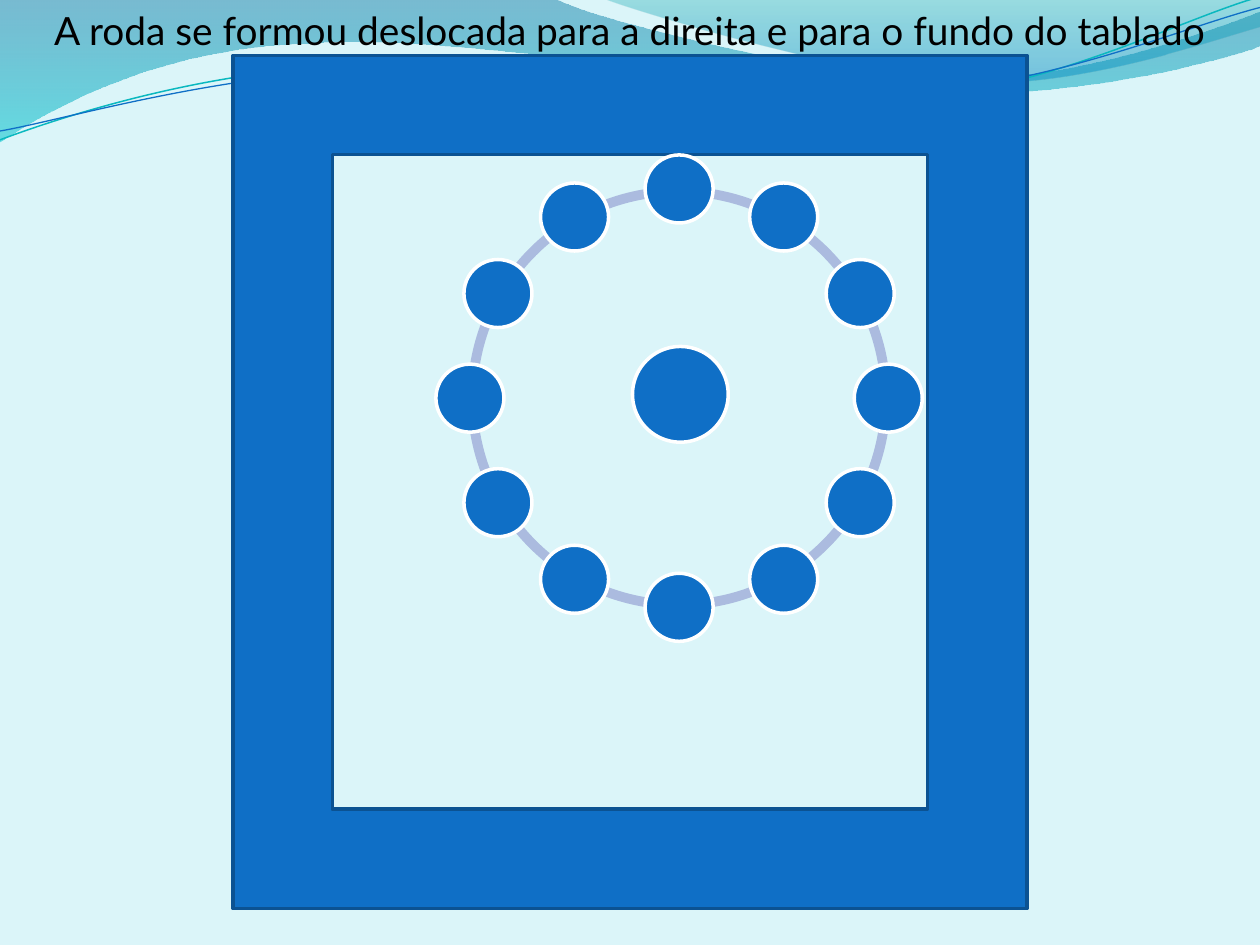
import math

from lxml import etree
from pptx import Presentation
from pptx import util as u
from pptx.dml.color import RGBColor
from pptx.enum import shapes, text
from pptx.oxml.ns import qn

COLORS = {
    "background": "DBF5F9", "blue": "0F6FC6", "edge": "0B5292", "ring": "ABBBDF",
    "white": "FFFFFF", "black": "000000", "teal line": "0AB8BF",
    "deep sea": "0074A1", "aqua": "00C6CF", "lagoon": "00A1A9", "ocean": "008BBF",
}
COLUMNS, ROWS = 10, 7.5
DANCERS = 12
TILT = -2.7

# Each wave is a start point, then straight steps (x, y)
# or curved steps (control x, y, control x, y, end x, y).
LEFT_WAVE = [
    (0, 0), (4.4, -0.01), (4.76, 0.17, 6.64, 0.63, 7.58, 0.63),
    (8.53, 0.63, 9.58, 0.26, 10, 0.09), (10.01, 0.36),
    (9.83, 0.44, 8.7, 0.76, 7.46, 0.75), (6.22, 0.75, 3.82, 0.28, 2.57, 0.34),
    (1.29, 0.36, 0.46, 0.83, -0.01, 1.13), (0, 0),
]
RIGHT_WAVE = [
    (4.79, -0.01), (5.09, 0.11, 6.82, 0.62, 7.69, 0.65),
    (8.56, 0.69, 9.61, 0.32, 10, 0.21), (10, 0), (4.79, -0.01),
]
TEAL_CURVE = [
    (0, 1.11), (0.48, 0.93, 1.58, 0.57, 2.77, 0.52),
    (3.95, 0.47, 5.93, 0.89, 7.13, 0.8), (8.33, 0.71, 9.38, 0.15, 9.98, -0.02),
]
BLUE_CURVE = [
    (0, 1.04), (0.47, 0.96, 1.64, 0.61, 2.83, 0.56),
    (4.03, 0.51, 5.97, 0.84, 7.17, 0.75), (8.36, 0.67, 9.41, 0.21, 10, 0.06),
]


def color(name):
    return RGBColor.from_string(COLORS[name])


def rotate(point, center, degrees):
    """Turn a point clockwise around a center."""
    angle = math.radians(degrees)
    x, y = point[0] - center[0], point[1] - center[1]
    return (center[0] + x * math.cos(angle) - y * math.sin(angle),
            center[1] + x * math.sin(angle) + y * math.cos(angle))


class Stage:
    """Draws on one slide, with lengths in grid columns and rows."""

    title_format = {"name": "Lato", "size": u.Pt(22.2), "bold": False}

    def __init__(self, presentation):
        self.slide = presentation.slides.add_slide(presentation.slide_layouts[6])
        self.column = presentation.slide_width / COLUMNS
        self.row = presentation.slide_height / ROWS
        fill = self.slide.background.fill
        fill.solid()
        fill.fore_color.rgb = color("background")

    def place(self, x, y):
        return round(x * self.column), round(y * self.row)

    def paint(self, shape, fill=None, line=None, width=2):
        shape.shadow.inherit = False
        if fill:
            shape.fill.solid()
            shape.fill.fore_color.rgb = color(fill)
        else:
            shape.fill.background()
        if line:
            shape.line.color.rgb = color(line)
            shape.line.width = u.Pt(width)
        else:
            shape.line.fill.background()

    def preset(self, kind, left, top, width, height, adjustments=(), **style):
        shape = self.slide.shapes.add_shape(
            kind, *self.place(left, top), *self.place(width, height))
        for index, value in enumerate(adjustments):
            shape.adjustments[index] = value
        self.paint(shape, **style)

    def circle(self, x, y, diameter):
        self.preset(shapes.MSO_SHAPE.OVAL, x - diameter / 2, y - diameter / 2,
                    diameter, diameter, fill="blue", line="white")

    def arc(self, x, y, diameter, start, end, thickness):
        """Draw a ring segment between two clockwise angles in degrees."""
        # Angles are stored in 60000ths, adjustments in 100000ths.
        self.preset(shapes.MSO_SHAPE.BLOCK_ARC, x - diameter / 2, y - diameter / 2,
                    diameter, diameter, (start * 0.6, end * 0.6, thickness), fill="ring")

    def curve(self, steps, close=False, tilt=0, center=(0, 0), **style):
        """Draw steps as an outline, stored level and then tilted around its center."""
        points = [self.place(*rotate(step[i:i + 2], center, -tilt))
                  for step in steps for i in range(0, len(step), 2)]
        builder = self.slide.shapes.build_freeform(*points[0])
        builder.add_line_segments(points[1:], close=close)
        shape = builder.convert_to_shape()
        segments = iter(list(shape._element.iter(qn("a:lnTo"))))
        for step in steps[1:]:
            segment = next(segments)
            if len(step) == 6:
                bend = etree.Element(qn("a:cubicBezTo"))
                segment.addprevious(bend)
                for part in (segment, next(segments), next(segments)):
                    bend.append(part[0])
                    part.getparent().remove(part)
        shape.rotation = tilt
        self.paint(shape, **style)
        return shape

    def wave(self, steps, stops):
        """Fill a closed outline from top to bottom; stops are (position, colour, opacity %)."""
        shape = self.curve(steps, close=True)
        shape.fill.gradient()
        shape.fill.gradient_angle = 270
        for stop, (position, name, _) in zip(shape.fill.gradient_stops, stops):
            stop.position = position
            stop.color.rgb = color(name)
        gradient_colors = shape._element.spPr.find(qn("a:gradFill")).iter(qn("a:srgbClr"))
        for element, (_, _, opacity) in zip(gradient_colors, stops):
            etree.SubElement(element, qn("a:alpha")).set("val", str(opacity * 1000))

    def title(self, words, height):
        box = self.slide.shapes.add_textbox(0, 0, *self.place(COLUMNS, height))
        box.text_frame.word_wrap = True
        paragraph = box.text_frame.paragraphs[0]
        paragraph.alignment = text.PP_ALIGN.CENTER
        run = paragraph.add_run()
        run.text = words
        for name, value in self.title_format.items():
            setattr(run.font, name, value)
        run.font.color.rgb = color("black")


def main():
    presentation = Presentation()
    presentation.slide_width, presentation.slide_height = u.Inches(10), u.Inches(7.5)
    stage = Stage(presentation)

    stage.wave(LEFT_WAVE, [(0, "deep sea", 45), (1, "aqua", 55)])
    stage.wave(RIGHT_WAVE, [(0, "lagoon", 30), (0.8, "ocean", 45)])
    stage.curve(TEAL_CURVE, tilt=TILT, center=(4.99, 0.58), line="teal line", width=0.85)
    stage.curve(BLUE_CURVE, tilt=TILT, center=(5, 0.59), line="blue", width=0.75)

    stage.preset(shapes.MSO_SHAPE.FRAME, 1.85, 0.44, 6.3, 6.77, fill="blue", line="edge")

    center_x, center_y, radius = 5.39, 3.16, 1.66
    step = 360 // DANCERS
    # Arcs run counterclockwise from the top, dancers clockwise.
    for turn in range(DANCERS):
        start = (270 - step * (turn + 1)) % 360
        stage.arc(center_x, center_y, 3.36, start, (start + step) % 360, 0.023)
    stage.circle(5.4, 3.13, 0.76)
    for turn in range(DANCERS):
        top = (center_x, center_y - radius)
        stage.circle(*rotate(top, (center_x, center_y), step * turn), 0.54)

    stage.title("A roda se formou deslocada para a direita e para o fundo do tablado", 0.52)
    presentation.save("out.pptx")


if __name__ == "__main__":
    main()
